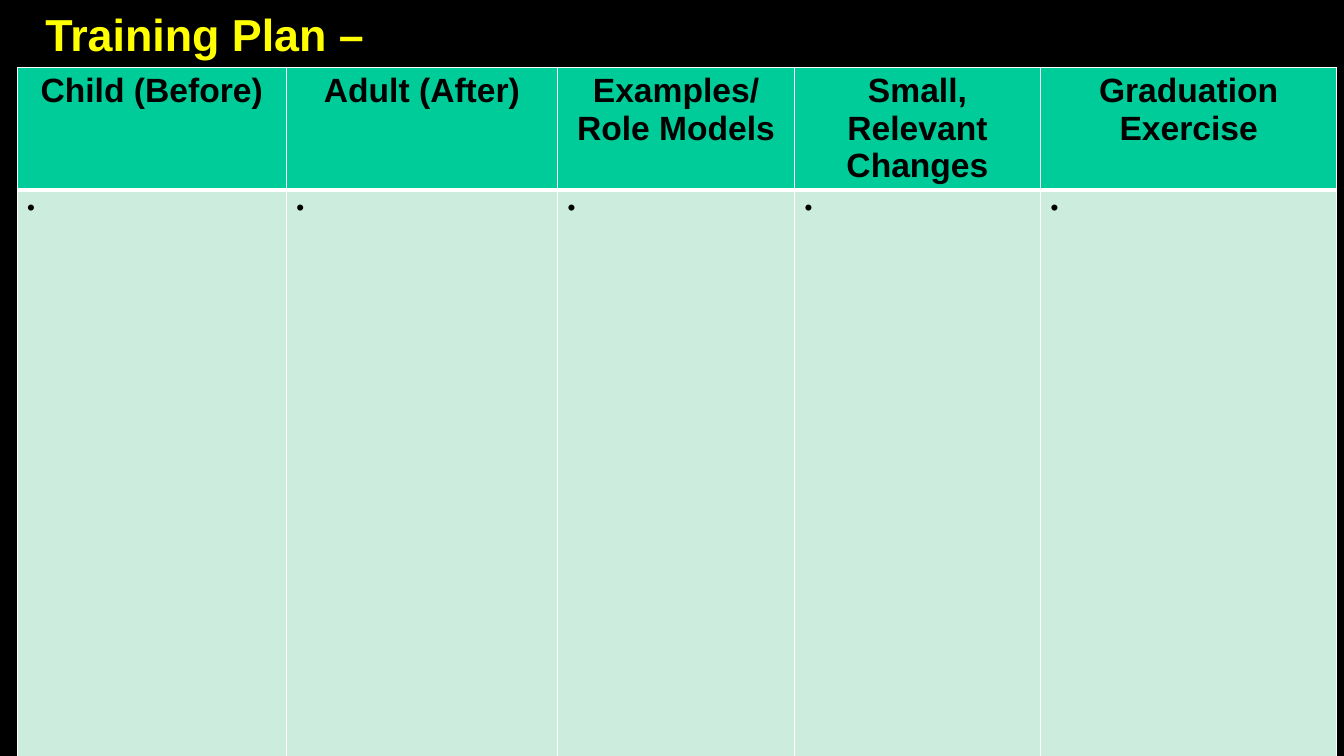
from lxml import etree
from pptx import Presentation
from pptx import util as u
from pptx.dml import color
from pptx.enum import text
from pptx.oxml import ns

COLORS = {"background": "000000", "title": "FFFF00", "text": "000000",
          "header": "00CC99", "body": "CCECDE", "border": "FFFFFF"}
TITLE_FONT = {"name": "Arial", "size": u.Pt(32), "bold": True}
HEADING_FONT = {"name": "Arial", "size": u.Pt(24), "bold": True}
ENTRY_FONT = {"name": "Arial", "size": u.Pt(16), "bold": False}

HEADINGS = ["Child (Before)", "Adult (After)", "Examples/Role Models",
            "Small, Relevant Changes", "Graduation Exercise"]
COLUMN_WIDTHS = [2.67, 2.69, 2.35, 2.44, 2.94]
ROW_HEIGHTS = [0.67, 5.99]


def rgb(key):
    return color.RGBColor.from_string(COLORS[key])


def format_font(font, values, color_key):
    for attribute, value in values.items():
        setattr(font, attribute, value)
    font.color.rgb = rgb(color_key)


def add_borders(cell, widths):
    properties = cell._tc.get_or_add_tcPr()
    for side, points in widths.items():
        border = etree.SubElement(properties, ns.qn(f"a:ln{side}"), w=str(u.Pt(points)))
        fill = etree.SubElement(border, ns.qn("a:solidFill"))
        etree.SubElement(fill, ns.qn("a:srgbClr"), val=COLORS["border"])


def add_bullet(paragraph):
    properties = paragraph._p.get_or_add_pPr()
    properties.set("marL", str(u.Inches(0.19)))
    properties.set("indent", str(u.Inches(-0.19)))
    etree.SubElement(properties, ns.qn("a:buFont"), typeface="Arial")
    etree.SubElement(properties, ns.qn("a:buChar"), char="•")


def fill_cell(cell, wording, font_values, fill_key, border_widths):
    add_borders(cell, border_widths)
    cell.fill.solid()
    cell.fill.fore_color.rgb = rgb(fill_key)
    paragraph = cell.text_frame.paragraphs[0]
    run = paragraph.add_run()
    run.text = wording
    format_font(run.font, font_values, "text")
    return paragraph


def place_title(slide, left, top, width, height):
    title = slide.shapes.title
    box = {"left": left, "top": top, "width": width, "height": height}
    for attribute, value in box.items():
        setattr(title, attribute, u.Inches(value))
    title.text_frame.vertical_anchor = text.MSO_ANCHOR.MIDDLE
    paragraph = title.text_frame.paragraphs[0]
    paragraph.alignment = text.PP_ALIGN.LEFT
    run = paragraph.add_run()
    run.text = "Training Plan –"
    format_font(run.font, TITLE_FONT, "title")


def place_plan(slide, left, top, width, height):
    plan = slide.shapes.add_table(len(ROW_HEIGHTS), len(HEADINGS), u.Inches(left),
                                  u.Inches(top), u.Inches(width), u.Inches(height)).table
    for row, row_height in zip(plan.rows, ROW_HEIGHTS):
        row.height = u.Inches(row_height)
    for index, (heading, column_width) in enumerate(zip(HEADINGS, COLUMN_WIDTHS)):
        plan.columns[index].width = u.Inches(column_width)
        heading_line = fill_cell(plan.cell(0, index), heading, HEADING_FONT, "header",
                                 {"L": 1, "R": 1, "T": 1, "B": 3})
        heading_line.alignment = text.PP_ALIGN.CENTER
        entry = fill_cell(plan.cell(1, index), " ", ENTRY_FONT, "body",
                          {"L": 1, "R": 1, "T": 3, "B": 1})
        add_bullet(entry)


def main():
    presentation = Presentation()
    presentation.slide_width = u.Inches(13.33)
    presentation.slide_height = u.Inches(7.5)
    slide = presentation.slides.add_slide(presentation.slide_layouts[5])
    slide.background.fill.solid()
    slide.background.fill.fore_color.rgb = rgb("background")
    place_title(slide, 0.35, 0, 12.98, 0.67)
    place_plan(slide, 0.17, 0.67, sum(COLUMN_WIDTHS), sum(ROW_HEIGHTS))
    presentation.save("out.pptx")


if __name__ == "__main__":
    main()
